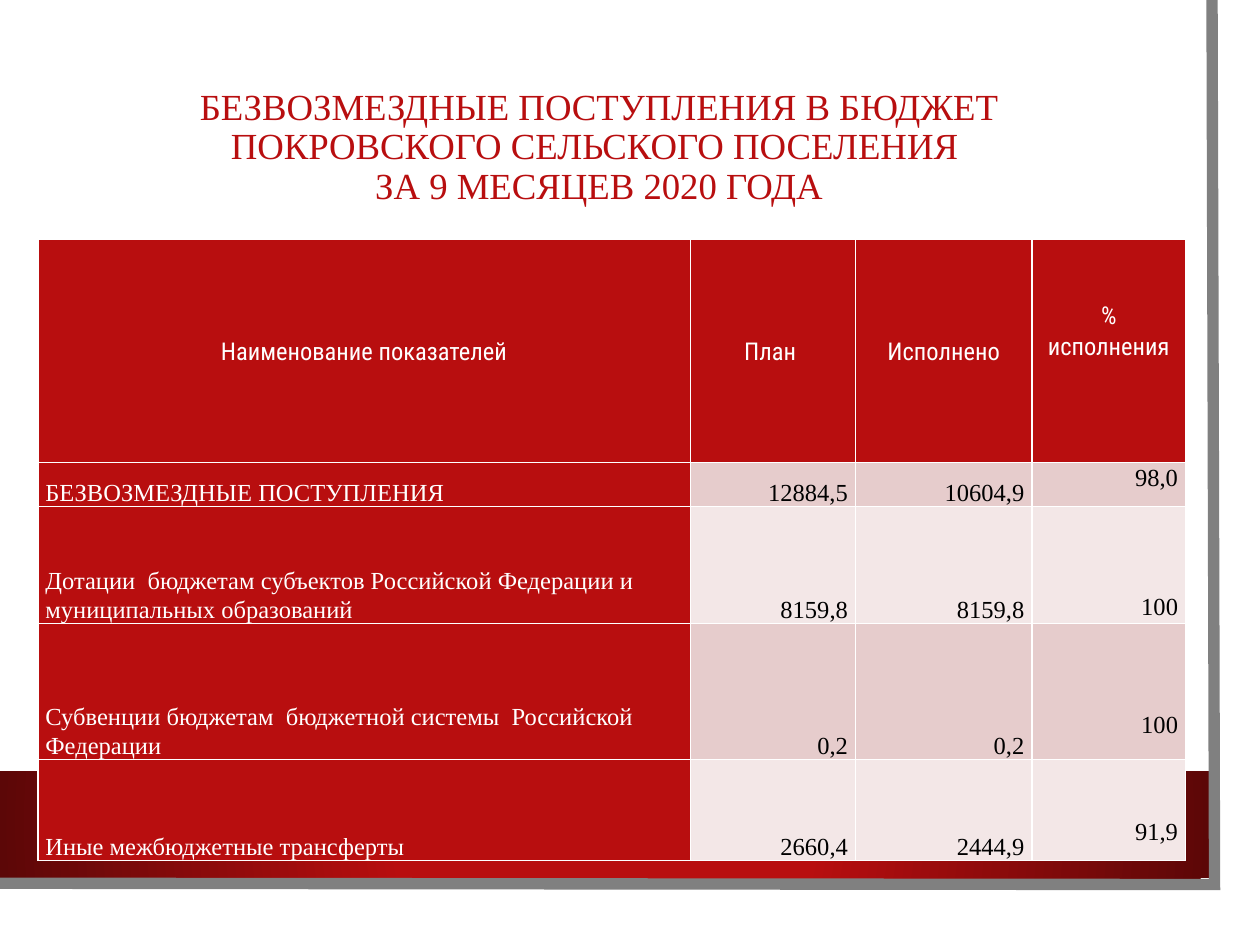
from dataclasses import dataclass

from lxml import etree
from pptx import Presentation
from pptx.dml.color import RGBColor
from pptx.enum.shapes import MSO_SHAPE
from pptx.enum.text import MSO_ANCHOR, PP_ALIGN
from pptx.oxml import parse_xml
from pptx.oxml.ns import qn
from pptx.util import Inches, Pt


@dataclass(frozen=True)
class Theme:
    red: str = "B80E0F"
    dark_red: str = "5C0707"
    white: str = "FFFFFF"
    black: str = "000000"
    gray: str = "808080"
    bands: tuple = ("E6CCCC", "F3E7E7")
    serif: str = "Times New Roman"
    condensed: str = "Roboto Condensed"
    title_size: int = 21
    table_size: int = 14


THEME = Theme()

TITLE = ["БЕЗВОЗМЕЗДНЫЕ ПОСТУПЛЕНИЯ В БЮДЖЕТ ПОКРОВСКОГО СЕЛЬСКОГО ПОСЕЛЕНИЯ ",
         "ЗА 9 МЕСЯЦЕВ 2020 ГОДА"]
HEADER = ["Наименование показателей", "План ", "Исполнено", "%\nисполнения"]
INCOME = [
    ["БЕЗВОЗМЕЗДНЫЕ ПОСТУПЛЕНИЯ", "12884,5", "10604,9", "98,0"],
    ["Дотации  бюджетам субъектов Российской Федерации и муниципальных образований",
     "8159,8", "8159,8", "100"],
    ["Субвенции бюджетам  бюджетной системы  Российской Федерации",
     "0,2", "0,2", "100"],
    ["Иные межбюджетные трансферты", "2660,4", "2444,9", "91,9"],
]
COLUMN_WIDTHS = [5.18, 1.31, 1.4, 1.22]
ROW_HEIGHTS = [1.77, 0.35, 0.91, 1.08, 0.8]
PERCENT_OFFSETS = [0.48, 0, 0.68, 0.68, 0.45]  # inset above the last column's text
PERCENT_COLUMN = len(HEADER) - 1


def rgb(value):
    return RGBColor.from_string(value)


def add_run(paragraph, text, font_name, size, color):
    run = paragraph.add_run()
    run.text = text
    run.font.name = font_name
    run.font.size = Pt(size)
    run.font.bold = False
    run.font.color.rgb = rgb(color)


def add_panel(slide, left, top, width, height):
    panel = slide.shapes.add_shape(
        MSO_SHAPE.RECTANGLE, *map(Inches, (left, top, width, height)))
    panel.shadow.inherit = False
    panel.line.fill.background()
    panel.fill.solid()
    panel.fill.fore_color.rgb = rgb(THEME.white)
    return panel


def fill_radial(shape, inner, outer):
    """Replace the solid fill with a gradient that spreads from the centre."""
    solid = shape._element.spPr.find(qn("a:solidFill"))
    gradient = parse_xml(
        '<a:gradFill xmlns:a="http://schemas.openxmlformats.org/drawingml/2006/main"'
        ' rotWithShape="1"><a:gsLst>'
        f'<a:gs pos="34000"><a:srgbClr val="{inner}"/></a:gs>'
        f'<a:gs pos="100000"><a:srgbClr val="{outer}"/></a:gs></a:gsLst>'
        '<a:path path="circle"><a:fillToRect l="50000" t="50000" r="50000" b="50000"/>'
        '</a:path></a:gradFill>')
    solid.getparent().replace(solid, gradient)


def add_backdrop(slide):
    add_panel(slide, 0, 0, 9.83, 7.27)
    fill_radial(add_panel(slide, 0, 6.12, 9.6, 0.85), THEME.red, THEME.dark_red)
    builder = slide.shapes.build_freeform(Inches(9.62), 0)
    builder.add_line_segments(
        [(Inches(9.64), Inches(7.02)), (Inches(-0.02), Inches(7.01))], close=False)
    edge = builder.convert_to_shape()
    edge.shadow.inherit = False
    edge.fill.background()
    edge.line.color.rgb = rgb(THEME.gray)
    edge.line.width = Pt(6.5)
    etree.SubElement(edge.line._ln, qn("a:miter"), lim="800000")


def add_title(slide):
    box = slide.shapes.add_textbox(*map(Inches, (0.38, 0.38, 8.75, 1.59)))
    frame = box.text_frame
    frame.word_wrap = True
    frame.vertical_anchor = MSO_ANCHOR.MIDDLE
    paragraph = frame.paragraphs[0]
    paragraph.alignment = PP_ALIGN.CENTER
    paragraph.line_spacing = 0.9
    for index, line in enumerate(TITLE):
        if index:
            paragraph.add_line_break()
        add_run(paragraph, line, THEME.serif, THEME.title_size, THEME.red)


def set_borders(cell):
    properties = cell._tc.get_or_add_tcPr()
    for side in ("lnL", "lnR", "lnT", "lnB"):
        line = etree.SubElement(properties, qn(f"a:{side}"), w=str(Pt(1)))
        fill = etree.SubElement(line, qn("a:solidFill"))
        etree.SubElement(fill, qn("a:srgbClr"), val=THEME.white)


def fill_cell(cell, row, column, text):
    is_header, is_label = row == 0, column == 0
    on_red = is_header or is_label
    set_borders(cell)
    cell.fill.solid()
    cell.fill.fore_color.rgb = rgb(THEME.red if on_red else THEME.bands[(row - 1) % 2])
    cell.margin_left = cell.margin_right = Inches(0.06)
    cell.margin_top = cell.margin_bottom = 0
    if column == PERCENT_COLUMN:
        cell.vertical_anchor = MSO_ANCHOR.TOP
        cell.margin_top = Inches(PERCENT_OFFSETS[row])
    else:
        cell.vertical_anchor = MSO_ANCHOR.MIDDLE if is_header else MSO_ANCHOR.BOTTOM
    if is_header:
        alignment = PP_ALIGN.CENTER
    else:
        alignment = PP_ALIGN.LEFT if is_label else PP_ALIGN.RIGHT
    frame = cell.text_frame
    for index, line in enumerate(text.split("\n")):
        paragraph = frame.add_paragraph() if index else frame.paragraphs[0]
        paragraph.alignment = alignment
        paragraph.line_spacing = 1.07
        add_run(paragraph, line, THEME.condensed if is_header else THEME.serif,
                THEME.table_size, THEME.white if on_red else THEME.black)


def add_income_table(slide):
    table = slide.shapes.add_table(
        len(ROW_HEIGHTS), len(COLUMN_WIDTHS), Inches(0.3), Inches(1.9),
        Inches(sum(COLUMN_WIDTHS)), Inches(sum(ROW_HEIGHTS))).table
    table.horz_banding = False
    for column, width in zip(table.columns, COLUMN_WIDTHS):
        column.width = Inches(width)
    for row, height in zip(table.rows, ROW_HEIGHTS):
        row.height = Inches(height)
    for row, texts in enumerate([HEADER, *INCOME]):
        for column, text in enumerate(texts):
            fill_cell(table.cell(row, column), row, column, text)


def main():
    deck = Presentation()
    deck.slide_width, deck.slide_height = Inches(10), Inches(7.5)
    slide = deck.slides.add_slide(deck.slide_layouts[6])
    add_backdrop(slide)
    add_title(slide)
    add_income_table(slide)
    deck.save("out.pptx")


if __name__ == "__main__":
    main()
